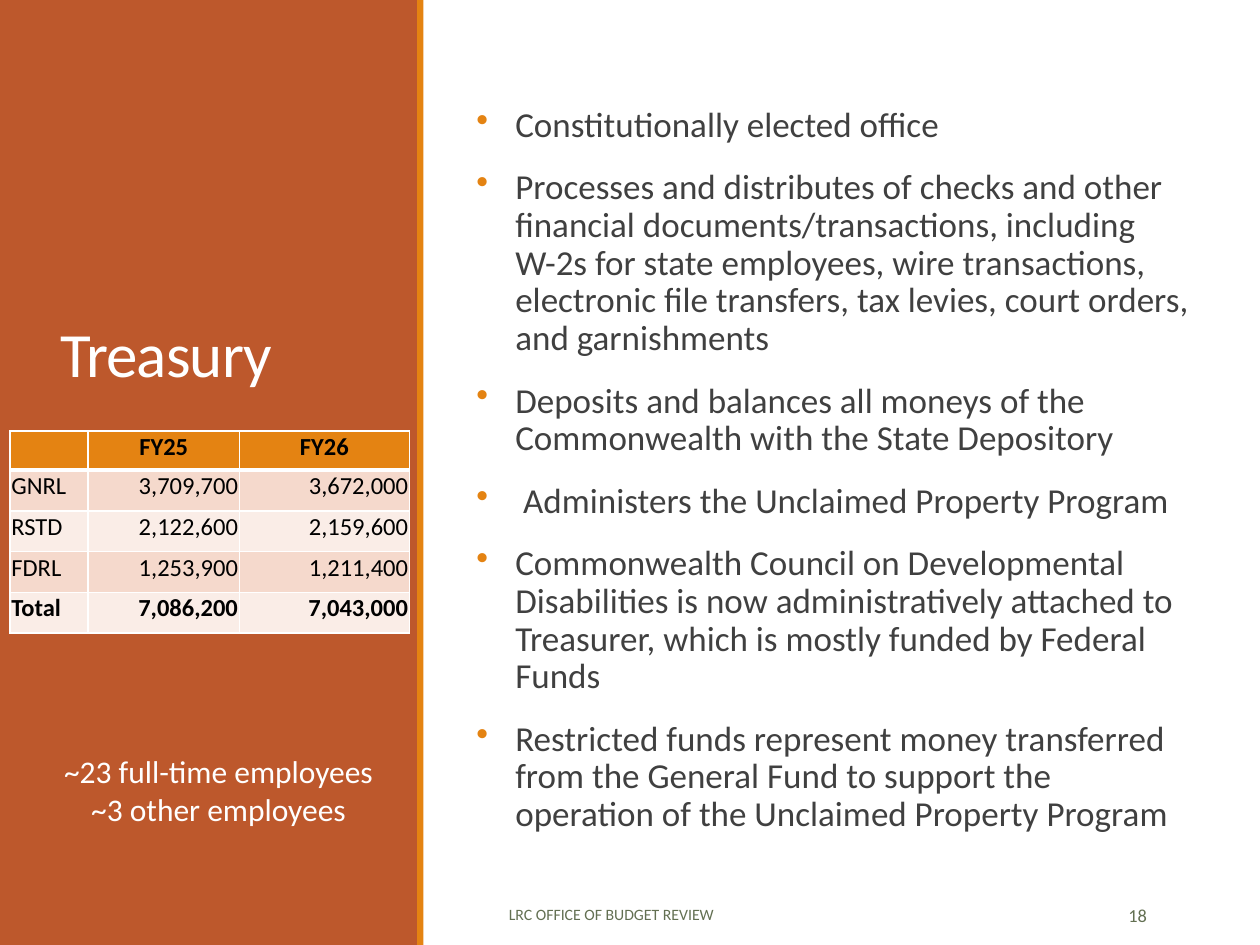
from pptx import Presentation
from pptx.dml.color import RGBColor
from pptx.enum.shapes import MSO_SHAPE as SHAPE
from pptx.enum.text import MSO_ANCHOR as ANCHOR, PP_ALIGN as ALIGN
from pptx.oxml import parse_xml
from pptx.oxml.ns import nsdecls
from pptx.util import Inches, Pt

RUST, GOLD, WHITE, BLACK = "BD582C", "E48312", "FFFFFF", "000000"
GRAY, OLIVE, ROSE, BLUSH = "404040", "637052", "F5D9CC", "FAEDE7"


def hue(code):
    return RGBColor.from_string(code)


def write(frame, *lines, size, color, align=ALIGN.LEFT, anchor=ANCHOR.TOP,
          bold=False, pad=None, space=None, before=0, after=0, track=0,
          bullet=None):
    frame.word_wrap = True
    frame.vertical_anchor = anchor
    if pad:
        (frame.margin_left, frame.margin_top,
         frame.margin_right, frame.margin_bottom) = [Inches(v) for v in pad]
    for i, line in enumerate(lines):
        para = frame.add_paragraph() if i else frame.paragraphs[0]
        para.alignment, para.line_spacing = align, space
        para.space_before, para.space_after = Pt(before), Pt(after)
        run = para.add_run()
        run.text = line
        font = run.font
        font.name, font.size, font.bold = "Calibri", Pt(size), bold
        font.color.rgb = hue(color)
        if track:
            font._element.set("spc", str(track))
        if bullet:
            props = para._p.get_or_add_pPr()
            props.set("marL", str(Inches(0.31)))
            props.set("indent", str(-Inches(0.31)))
            props.append(parse_xml(f'<a:buClr {nsdecls("a")}><a:srgbClr val="{bullet}"/></a:buClr>'))
            props.append(parse_xml(f'<a:buChar {nsdecls("a")} char="•"/>'))


deck = Presentation()
deck.slide_width, deck.slide_height = Inches(10), Inches(7.5)
slide = deck.slides.add_slide(deck.slide_layouts[6])
shapes = slide.shapes

# Grid of 100 columns by 75 rows
unit = deck.slide_width // 100

# Side panel and its edge
for left, wide, color in [(0, 33.2, RUST), (33.1, 0.5, GOLD)]:
    bar = shapes.add_shape(SHAPE.RECTANGLE, int(left * unit), 0,
                           int(wide * unit), deck.slide_height)
    bar.shadow.inherit = False
    bar.fill.solid()
    bar.fill.fore_color.rgb = hue(color)
    bar.line.fill.background()

# Text blocks: place on the grid, lines, format
duties = [
    "Constitutionally elected office",
    "Processes and distributes of checks and other financial documents/transactions, "
    "including W-2s for state employees, wire transactions, electronic file transfers, "
    "tax levies, court orders, and garnishments",
    "Deposits and balances all moneys of the Commonwealth with the State Depository",
    " Administers the Unclaimed Property Program",
    "Commonwealth Council on Developmental Disabilities is now administratively "
    "attached to Treasurer, which is mostly funded by Federal Funds",
    "Restricted funds represent money transferred from the General Fund to support "
    "the operation of the Unclaimed Property Program",
]
staff = ["~23 full-time employees", "~3 other employees"]
blocks = [
    ((3.8, 6.5, 26.2, 25), ["Treasury"],
     dict(size=36, color=WHITE, anchor=ANCHOR.BOTTOM, space=0.85, track=-50)),
    ((37.8, 8, 57.2, 61), duties,
     dict(size=20, color=GRAY, pad=(0, 0.05, 0, 0.05), space=0.9,
          before=12, after=2, bullet=GOLD)),
    ((39.4, 70.6, 38.1, 4), ["LRC OFFICE OF BUDGET REVIEW"],
     dict(size=9, color=OLIVE, anchor=ANCHOR.MIDDLE)),
    ((81.2, 70.6, 10.8, 4), ["18"],
     dict(size=10.5, color=OLIVE, anchor=ANCHOR.MIDDLE, align=ALIGN.RIGHT)),
    ((3.8, 59.2, 27.1, 7.1), staff,
     dict(size=18, color=WHITE, align=ALIGN.CENTER)),
]
for place, lines, style in blocks:
    box = shapes.add_textbox(*[int(v * unit) for v in place])
    write(box.text_frame, *lines, **style)

# Budget table
rows = [
    ("", "FY25", "FY26"),
    ("GNRL", "3,709,700", "3,672,000"),
    ("RSTD", "2,122,600", "2,159,600"),
    ("FDRL", "1,253,900", "1,211,400"),
    ("Total", "7,086,200", "7,043,000"),
]
last = len(rows) - 1
table = shapes.add_table(len(rows), 3, *[int(v * unit) for v in (0.8, 34.2, 31.7, 15.8)]).table
for col, wide in zip(table.columns, (6.2, 12, 13.5)):
    col.width = int(wide * unit)
for r, row in enumerate(rows):
    table.rows[r].height = int((3.24 if r else 2.9) * unit)
    for c, word in enumerate(row):
        cell = table.cell(r, c)
        cell.margin_left = cell.margin_top = cell.margin_right = Inches(0.01)
        cell.margin_bottom = 0
        align = ALIGN.CENTER if r == 0 else ALIGN.RIGHT if c else ALIGN.LEFT
        write(cell.text_frame, word, size=14, color=BLACK,
              align=align, bold=r in (0, last))
        # White rules, thick between header and body
        props = cell._tc.get_or_add_tcPr()
        for side in "LRTB":
            thick = (r, side) in ((0, "B"), (1, "T"))
            props.append(parse_xml(
                f'<a:ln{side} {nsdecls("a")} w="{Pt(3 if thick else 1)}"><a:solidFill>'
                f'<a:srgbClr val="{WHITE}"/></a:solidFill></a:ln{side}>'))
        cell.fill.solid()
        cell.fill.fore_color.rgb = hue(GOLD if r == 0 else ROSE if r % 2 else BLUSH)

deck.save("out.pptx")
